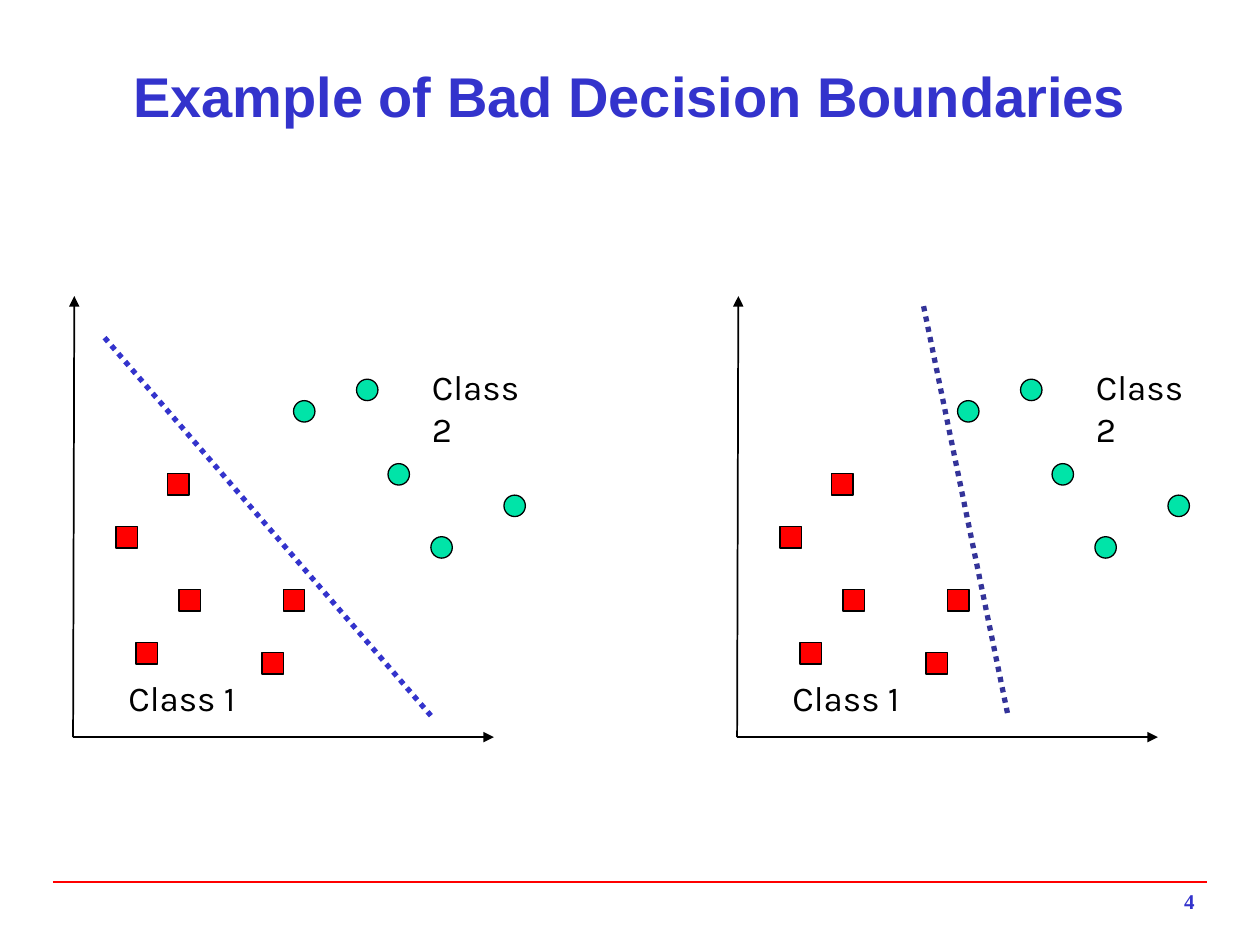
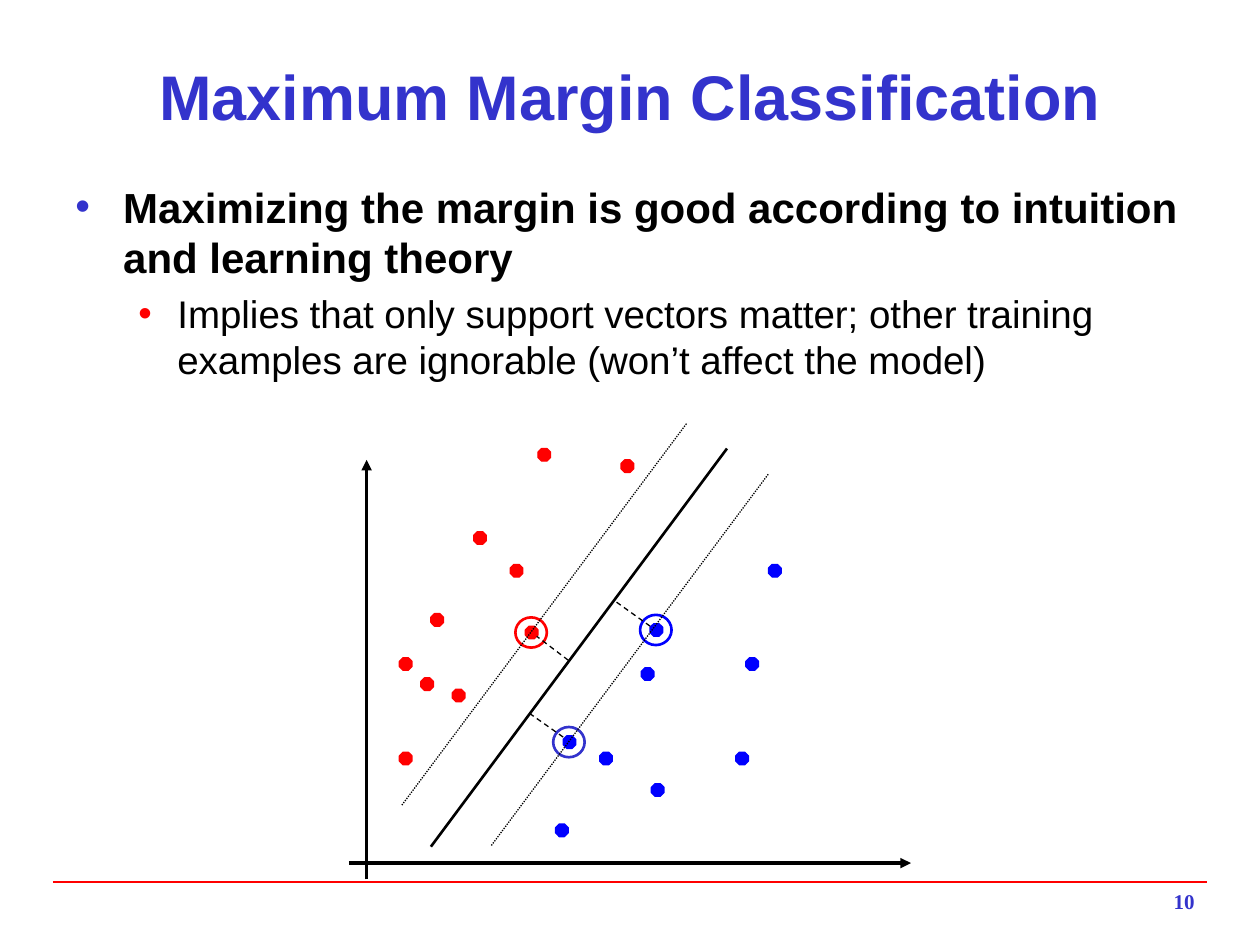
from typing import NamedTuple, Optional

from lxml.etree import SubElement
from pptx import Presentation
from pptx.dml.color import RGBColor
from pptx.enum.dml import MSO_LINE
from pptx.enum.shapes import MSO_CONNECTOR, MSO_SHAPE as Preset
from pptx.enum.text import MSO_ANCHOR, MSO_AUTO_SIZE, PP_ALIGN
from pptx.oxml.ns import qn
from pptx.slide import Slide
from pptx.text.text import TextFrame
from pptx.util import Inches, Pt

BLACK = RGBColor(0x00, 0x00, 0x00)
RED = RGBColor(0xFF, 0x00, 0x00)
BLUE = RGBColor(0x00, 0x00, 0xFF)
GREEN = RGBColor(0x00, 0xE4, 0xA8)
INDIGO = RGBColor(0x33, 0x33, 0xCC)
DARK_INDIGO = RGBColor(0x33, 0x33, 0x99)

TITLE_ONLY = 5
PLOT_STEP = 5.27  # distance between the two plots of the first slide


class Line(NamedTuple):
    start: tuple[float, float]
    end: tuple[float, float]
    color: RGBColor = BLACK
    width: float = 0.75
    dash: Optional[MSO_LINE] = None
    arrow: bool = False


class Marker(NamedTuple):
    """Look shared by all the points of one class."""
    preset: Preset
    width: float
    height: float
    fill: Optional[RGBColor]
    outline: RGBColor
    outline_width: float = 0.75


class Label(NamedTuple):
    text: str
    left: float
    top: float
    width: float


class Bullet(NamedTuple):
    text: str
    size: float
    bold: bool
    color: RGBColor
    margin: float
    hanging: float
    level: int


FOOTER_RULE = Line((0.42, 7), (9.58, 7), RED, 1)

SQUARE = Marker(Preset.RECTANGLE, 0.17, 0.17, RED, BLACK)
CIRCLE = Marker(Preset.OVAL, 0.17, 0.17, GREEN, BLACK)
RED_DOT = Marker(Preset.OCTAGON, 0.1, 0.1, RED, RED)
BLUE_DOT = Marker(Preset.OCTAGON, 0.1, 0.1, BLUE, BLUE)

CLASS_1 = [(0.92, 4.18), (2.25, 4.68), (2.08, 5.18),
           (1.42, 4.68), (1.08, 5.1), (1.33, 3.76)]
CLASS_2 = [(2.83, 3.01), (3.08, 3.68), (4, 3.93), (2.33, 3.18), (3.42, 4.26)]
CLASS_LABELS = [Label("Class 1", 0.92, 5.32, 1.1),
                Label("Class 2", 3.33, 2.85, 1.04)]
CLASS_AXES = [Line((0.58, 5.85), (0.59, 2.35), width=1, arrow=True),
              Line((0.58, 5.85), (3.92, 5.85), width=1, arrow=True)]
BAD_BOUNDARIES = [
    Line((0.83, 2.68), (3.42, 5.68), INDIGO, 3, MSO_LINE.ROUND_DOT),
    Line((7.33, 2.43), (8, 5.68), DARK_INDIGO, 3, MSO_LINE.ROUND_DOT),
]

BULLETS = [
    Bullet("Maximizing the margin is good according to intuition "
           "and learning theory", 24, True, INDIGO, 0.38, 0.38, 0),
    Bullet("Implies that only support vectors matter; other training examples "
           "are ignorable (won’t affect the model)",
           22, False, RED, 0.81, 0.31, 1),
]
RED_POINTS = [(4.05, 4.48), (3.42, 4.87), (3.59, 5.47), (3.17, 5.97),
              (3.76, 4.22), (3.17, 5.22), (3.34, 5.38), (4.17, 4.97),
              (4.27, 3.56), (4.93, 3.65)]
BLUE_POINTS = [(5.16, 4.95), (4.76, 5.97), (5.84, 5.97), (4.41, 6.54),
               (5.09, 5.3), (4.47, 5.84), (5.17, 6.22), (5.92, 5.22),
               (6.1, 4.48)]
SUPPORT_RINGS = [(4.09, 4.9, RED), (4.39, 5.77, INDIGO), (5.08, 4.88, BLUE)]
MARGIN_AXES = [Line((2.91, 6.98), (2.91, 3.65), width=2, arrow=True),
               Line((2.77, 6.85), (7.23, 6.85), width=2, arrow=True)]
MARGIN_LINES = [
    Line((3.42, 6.72), (5.77, 3.56), width=1.5),
    Line((5.16, 4.97), (4.88, 4.77), dash=MSO_LINE.DASH),
    Line((4.47, 5.85), (4.2, 5.66), dash=MSO_LINE.DASH),
    Line((4.51, 5.24), (4.26, 5.05), dash=MSO_LINE.DASH),
    Line((3.9, 6.71), (6.1, 3.76), dash=MSO_LINE.ROUND_DOT),
    Line((3.19, 6.39), (5.45, 3.36), dash=MSO_LINE.ROUND_DOT),
]


def add_run(paragraph, text: str, size: float, color: RGBColor,
            font: str = "Arial", bold: bool = False) -> None:
    run = paragraph.add_run()
    run.text = text
    run.font.name = font
    run.font.size = Pt(size)
    run.font.bold = bold
    run.font.color.rgb = color


def add_text_box(slide: Slide, left: float, top: float,
                 width: float, height: float) -> TextFrame:
    box = slide.shapes.add_textbox(Inches(left), Inches(top),
                                   Inches(width), Inches(height))
    box.text_frame.word_wrap = True
    return box.text_frame


def draw_line(slide: Slide, line: Line, shift: float = 0) -> None:
    (x1, y1), (x2, y2) = line.start, line.end
    connector = slide.shapes.add_connector(
        MSO_CONNECTOR.STRAIGHT, Inches(x1 + shift), Inches(y1),
        Inches(x2 + shift), Inches(y2))
    connector.line.color.rgb = line.color
    connector.line.width = Pt(line.width)
    if line.dash is not None:
        connector.line.dash_style = line.dash
    properties = connector._element.spPr
    if line.arrow:
        SubElement(properties.find(qn("a:ln")), qn("a:tailEnd"), type="triangle")
    SubElement(properties, qn("a:effectLst"))


def draw_marker(slide: Slide, marker: Marker, left: float, top: float) -> None:
    shape = slide.shapes.add_shape(marker.preset, Inches(left), Inches(top),
                                   Inches(marker.width), Inches(marker.height))
    shape.shadow.inherit = False
    if marker.fill is None:
        shape.fill.background()
    else:
        shape.fill.solid()
        shape.fill.fore_color.rgb = marker.fill
    shape.line.color.rgb = marker.outline
    shape.line.width = Pt(marker.outline_width)


def add_titled_slide(presentation, title: str, size: float, number: int) -> Slide:
    slide = presentation.slides.add_slide(presentation.slide_layouts[TITLE_ONLY])
    draw_line(slide, FOOTER_RULE)

    placeholder = slide.shapes.title
    placeholder.left, placeholder.top = Inches(0.5), Inches(0.42)
    placeholder.width, placeholder.height = Inches(9), Inches(0.67)
    frame = placeholder.text_frame
    frame.auto_size = MSO_AUTO_SIZE.NONE
    frame.vertical_anchor = MSO_ANCHOR.MIDDLE
    frame.paragraphs[0].alignment = PP_ALIGN.CENTER
    add_run(frame.paragraphs[0], title, size, INDIGO, bold=True)

    paragraph = add_text_box(slide, 7.5, 7, 2.08, 0.33).paragraphs[0]
    paragraph.alignment = PP_ALIGN.RIGHT
    add_run(paragraph, str(number), 12, INDIGO, "Times New Roman", True)
    return slide


def add_bullets(slide: Slide, bullets: list[Bullet]) -> None:
    frame = add_text_box(slide, 0.5, 1.39, 9, 5.66)
    for index, bullet in enumerate(bullets):
        paragraph = frame.add_paragraph() if index else frame.paragraphs[0]
        paragraph.level = bullet.level
        paragraph.space_before = Pt(bullet.size * 0.2)
        add_run(paragraph, bullet.text, bullet.size, BLACK, bold=bullet.bold)
        properties = paragraph._p.get_or_add_pPr()
        properties.set("marL", str(Inches(bullet.margin)))
        properties.set("indent", str(-Inches(bullet.hanging)))
        color = SubElement(properties, qn("a:buClr"))
        SubElement(color, qn("a:srgbClr"), val=str(bullet.color))
        SubElement(properties, qn("a:buFont"), typeface="Arial")
        SubElement(properties, qn("a:buChar"), char="•")


def draw_class_plot(slide: Slide, shift: float) -> None:
    for axis in CLASS_AXES:
        draw_line(slide, axis, shift)
    for marker, points in ((CIRCLE, CLASS_2), (SQUARE, CLASS_1)):
        for left, top in points:
            draw_marker(slide, marker, left + shift, top)
    for label in CLASS_LABELS:
        frame = add_text_box(slide, label.left + shift, label.top,
                             label.width, 0.43)
        add_run(frame.paragraphs[0], label.text, 20, BLACK, "Karla")


def build_boundaries_slide(presentation) -> None:
    slide = add_titled_slide(presentation,
                             "Example of Bad Decision Boundaries", 32, 4)
    for index, boundary in enumerate(BAD_BOUNDARIES):
        draw_class_plot(slide, index * PLOT_STEP)
        draw_line(slide, boundary)


def build_margin_slide(presentation) -> None:
    slide = add_titled_slide(presentation,
                             "Maximum Margin Classification", 36, 10)
    add_bullets(slide, BULLETS)
    for axis in MARGIN_AXES:
        draw_line(slide, axis)
    for marker, points in ((RED_DOT, RED_POINTS), (BLUE_DOT, BLUE_POINTS)):
        for left, top in points:
            draw_marker(slide, marker, left, top)
    for left, top, color in SUPPORT_RINGS:
        ring = Marker(Preset.OVAL, 0.25, 0.24, None, color, 1.5)
        draw_marker(slide, ring, left, top)
    for line in MARGIN_LINES:
        draw_line(slide, line)


def main() -> None:
    presentation = Presentation()
    presentation.slide_width = Inches(10)
    presentation.slide_height = Inches(7.5)
    build_boundaries_slide(presentation)
    build_margin_slide(presentation)
    presentation.save("out.pptx")


if __name__ == "__main__":
    main()
